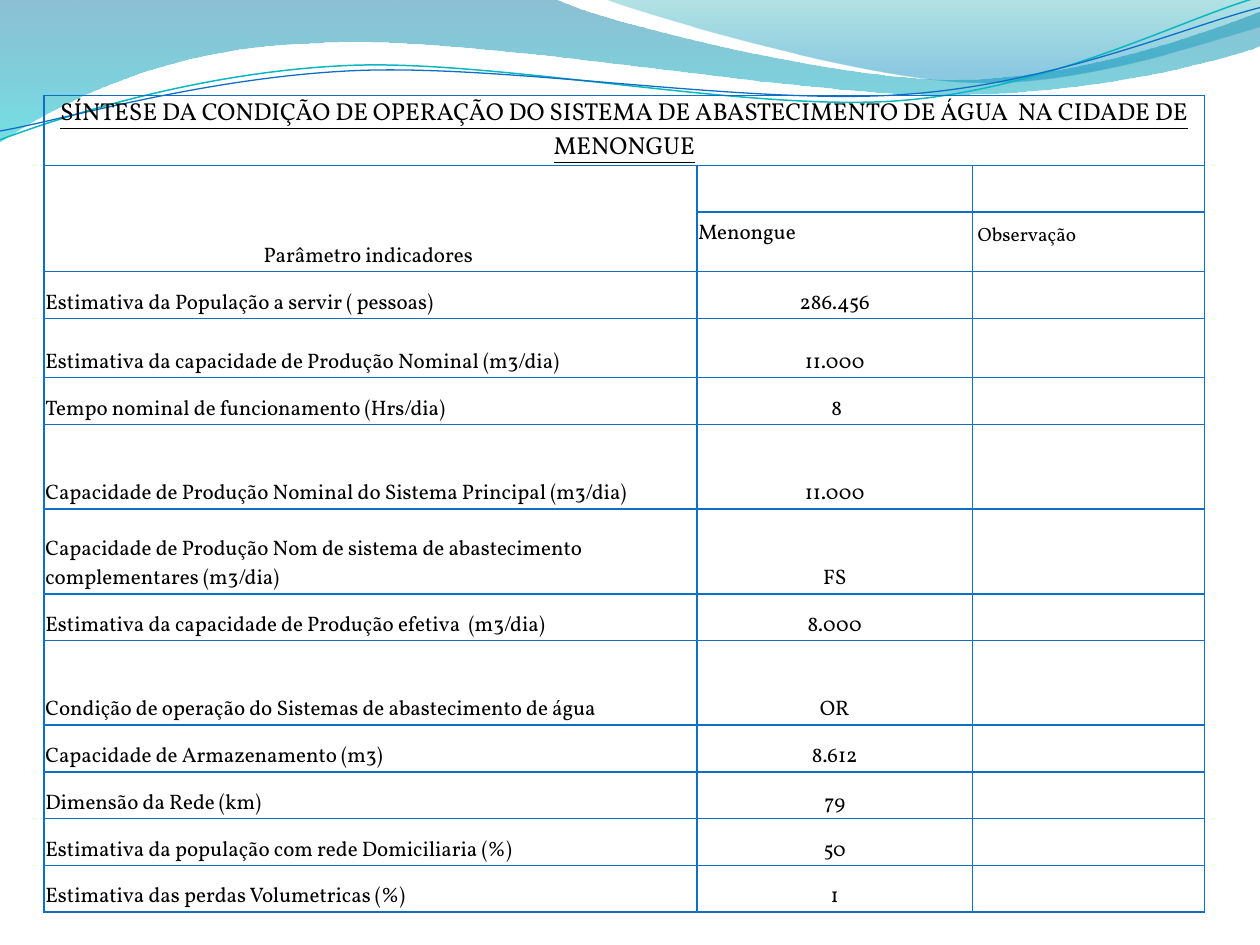
from math import cos, radians, sin

from lxml import etree
from pptx import Presentation
from pptx.dml.color import RGBColor
from pptx.enum.text import MSO_ANCHOR, PP_ALIGN
from pptx.oxml.ns import qn
from pptx.util import Inches, Pt

LEFT, CENTER, BOTTOM = PP_ALIGN.LEFT, PP_ALIGN.CENTER, MSO_ANCHOR.BOTTOM
FONT = "Vollkorn"
COLORS = {"text": "000000", "border": "0F6FC6", "teal": "0AB8BF", "blue": "0F6FC6",
          "deep": "0074A1", "aqua": "00C6CF", "sea": "00A1A9", "sky": "008BBF"}

TITLE = ("SÍNTESE DA CONDIÇÃO DE OPERAÇÃO DO SISTEMA DE ABASTECIMENTO "
         "DE ÁGUA  NA CIDADE DE MENONGUE")
HEADERS = ["Parâmetro indicadores ", "Menongue", " Observação"]
INDICATORS = [
    ("Estimativa da População a servir ( pessoas)", "286.456", 0.37),
    ("Estimativa da capacidade de Produção Nominal (m3/dia)", "11.000", 0.47),
    ("Tempo nominal de funcionamento (Hrs/dia)", " 8", 0.37),
    ("Capacidade de Produção Nominal do Sistema Principal (m3/dia)", "11.000", 0.67),
    ("Capacidade de Produção Nom de sistema de abastecimento complementares (m3/dia)",
     "FS", 0.67),
    ("Estimativa da capacidade de Produção efetiva  (m3/dia)", "8.000", 0.37),
    ("Condição de operação do Sistemas de abastecimento de água", "OR", 0.67),
    ("Capacidade de Armazenamento (m3)", "8.612", 0.37),
    ("Dimensão da Rede (km)", "79", 0.37),
    ("Estimativa da população com rede Domiciliaria (%)", "50", 0.37),
    ("Estimativa das perdas Volumetricas (%)", "1", 0.37),
]
COL_WIDTHS = [5.18, 2.19, 1.84]
ROW_HEIGHTS = [0.37, 0.37, 0.47] + [height for _, _, height in INDICATORS]
TABLE_HEIGHT = 6.3

WAVES = [
    {"box": (-0.01, -0.01, 10.02, 1.14),
     "points": [(0, 0), (4.4, -0.01),
                (4.76, 0.17, 6.64, 0.63, 7.58, 0.63), (8.53, 0.63, 9.58, 0.26, 10, 0.09),
                (10.01, 0.36),
                (9.83, 0.44, 8.7, 0.76, 7.46, 0.75), (6.22, 0.75, 3.82, 0.28, 2.57, 0.34),
                (1.29, 0.36, 0.46, 0.83, -0.01, 1.13), (0, 0)],
     "stops": [(0, "deep", 45), (1, "aqua", 55)]},
    {"box": (4.79, -0.01, 5.21, 0.7),
     "points": [(4.79, -0.01),
                (5.09, 0.11, 6.82, 0.62, 7.69, 0.65), (8.56, 0.69, 9.61, 0.32, 10, 0.21),
                (10, 0), (4.79, -0.01)],
     "stops": [(0, "sea", 30), (0.8, "sky", 45)]},
    {"box": (-0.02, 0.22, 10.02, 0.71), "turn": 357.3,
     "points": [(0, 1.11),
                (0.48, 0.93, 1.58, 0.57, 2.77, 0.52), (3.95, 0.47, 5.93, 0.89, 7.13, 0.8),
                (8.33, 0.71, 9.38, 0.15, 9.98, -0.02)],
     "line": ("teal", 0.85)},
    {"box": (-0.02, 0.3, 10.03, 0.58), "turn": 357.3,
     "points": [(0, 1.04),
                (0.47, 0.96, 1.64, 0.61, 2.83, 0.56), (4.03, 0.51, 5.97, 0.84, 7.17, 0.75),
                (8.36, 0.67, 9.41, 0.21, 10, 0.06)],
     "line": ("blue", 0.75)},
]


def rgb(name):
    return RGBColor.from_string(COLORS[name])


def draw_curves(outline, box, points, turn, closed):
    """Write line and Bézier segments, turned back into the unrotated box."""
    x, y, w, h = box
    c, n = cos(radians(-turn)), sin(radians(-turn))
    for child in list(outline):
        outline.remove(child)
    for i, seg in enumerate(points):
        tag = "a:moveTo" if i == 0 else "a:lnTo" if len(seg) == 2 else "a:cubicBezTo"
        step = etree.SubElement(outline, qn(tag))
        for px, py in zip(seg[::2], seg[1::2]):
            dx, dy = px - x - w / 2, py - y - h / 2
            etree.SubElement(step, qn("a:pt"), x=str(Inches(w / 2 + dx * c - dy * n)),
                             y=str(Inches(h / 2 + dx * n + dy * c)))
    if closed:
        etree.SubElement(outline, qn("a:close"))


def add_wave(s, box, points, turn=0, stops=None, line=None):
    """Draw one filled wave or one wavy line."""
    x, y, w, h = box
    builder = s.shapes.build_freeform(Inches(x), Inches(y))
    builder.add_line_segments([(Inches(x + w), Inches(y + h))], close=False)
    sp = builder.convert_to_shape()
    outline = next(sp._element.spPr.iter(qn("a:path")))
    draw_curves(outline, box, points, turn, bool(stops))
    sp.rotation = turn
    sp.shadow.inherit = False
    if line:
        sp.fill.background()
        sp.line.color.rgb, sp.line.width = rgb(line[0]), Pt(line[1])
        return
    sp.line.fill.background()
    sp.fill.gradient()
    sp.fill.gradient_angle = 270
    for stop, (position, color, _) in zip(sp.fill.gradient_stops, stops):
        stop.position, stop.color.rgb = position, rgb(color)
    for clr, (_, _, opacity) in zip(sp._element.spPr.iter(qn("a:srgbClr")), stops):
        etree.SubElement(clr, qn("a:alpha"), val=str(opacity * 1000))


def format_cell(cell):
    """Give a cell its margins, borders and no fill."""
    margins = {"margin_left": 0.01, "margin_right": 0.01, "margin_top": 0.01,
               "margin_bottom": 0}
    for name, value in margins.items():
        setattr(cell, name, Inches(value))
    cell.vertical_anchor = BOTTOM
    cell.fill.background()
    tc_pr = cell._tc.get_or_add_tcPr()
    for i, side in enumerate(("a:lnL", "a:lnR", "a:lnT", "a:lnB")):
        ln = etree.Element(qn(side), w=str(Pt(1)))
        fill = etree.SubElement(ln, qn("a:solidFill"))
        etree.SubElement(fill, qn("a:srgbClr"), val=COLORS["border"])
        tc_pr.insert(i, ln)
    cell.text_frame.paragraphs[0]._p.get_or_add_endParaRPr().set("sz", "1200")


def write(cell, text, align=LEFT, size=12, underline=False):
    p = cell.text_frame.paragraphs[0]
    p.alignment = align
    r = p.add_run()
    r.text = text
    font = {"name": FONT, "size": Pt(size), "underline": underline, "bold": False}
    for name, value in font.items():
        setattr(r.font, name, value)
    r.font.color.rgb = rgb("text")


def add_summary(s):
    """Build the indicator table."""
    table = s.shapes.add_table(len(ROW_HEIGHTS), len(COL_WIDTHS), Inches(0.35), Inches(0.76),
                               Inches(sum(COL_WIDTHS)), Inches(TABLE_HEIGHT)).table
    table.first_row = table.horz_banding = False
    for col, width in zip(table.columns, COL_WIDTHS):
        col.width = Inches(width)
    for row, height in zip(table.rows, ROW_HEIGHTS):
        row.height = Inches(height * TABLE_HEIGHT / sum(ROW_HEIGHTS))
    for cell in table.iter_cells():
        format_cell(cell)
    table.cell(0, 0).merge(table.cell(0, 2))
    table.cell(1, 0).merge(table.cell(2, 0))

    write(table.cell(0, 0), TITLE, CENTER, 14, True)
    write(table.cell(1, 0), HEADERS[0], CENTER)
    for col, size, gap in ((1, 12, 0.18), (2, 11, 0.17)):
        table.cell(2, col).margin_bottom = Inches(gap)
        write(table.cell(2, col), HEADERS[col], size=size)
    for row, (label, value, _) in enumerate(INDICATORS, 3):
        write(table.cell(row, 0), label)
        write(table.cell(row, 1), value, CENTER)


def main():
    prs = Presentation()
    prs.slide_width, prs.slide_height = Inches(10), Inches(7.5)
    s = prs.slides.add_slide(prs.slide_layouts[6])
    for wave in WAVES:
        add_wave(s, **wave)
    add_summary(s)
    prs.save("out.pptx")


if __name__ == "__main__":
    main()
